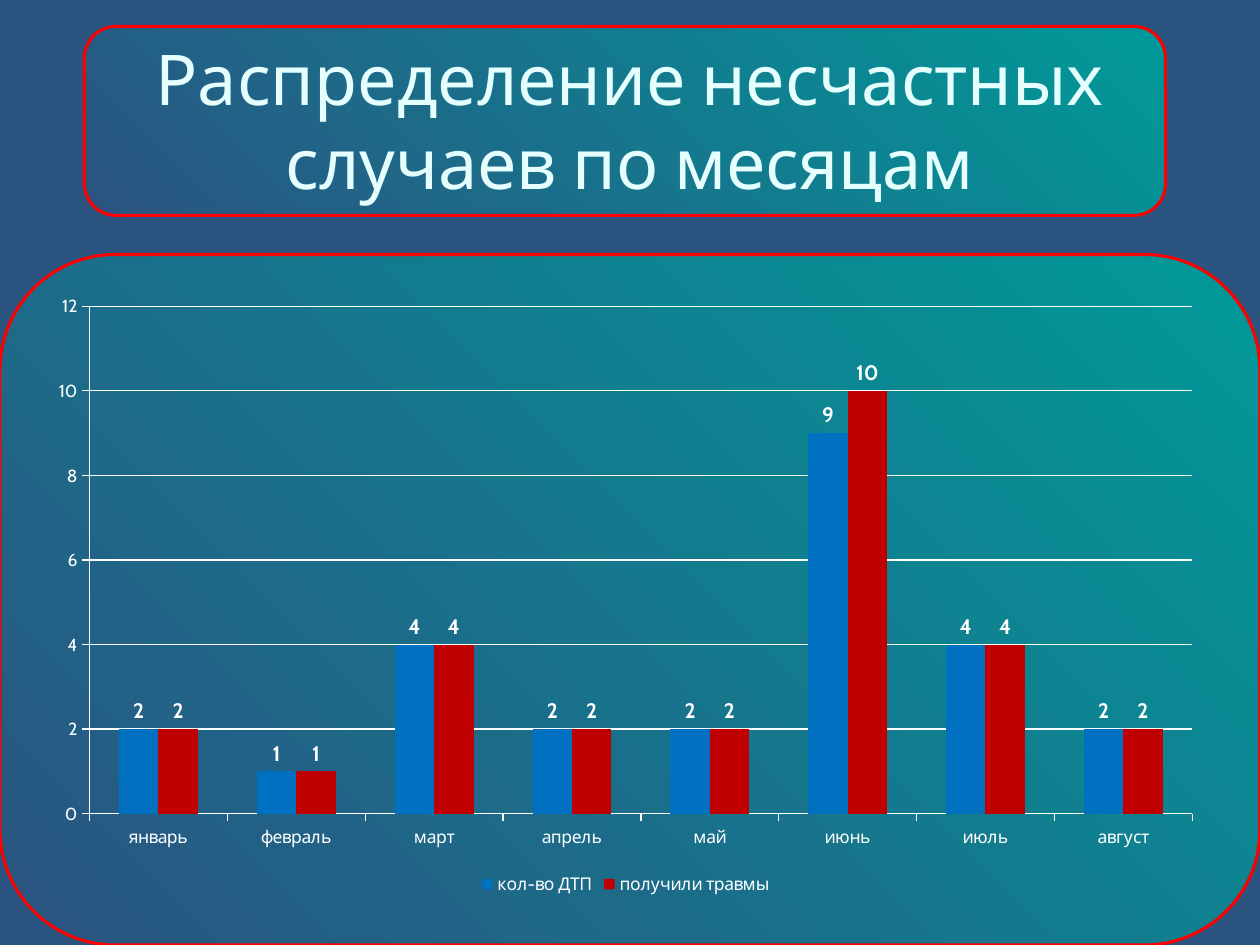
from lxml import etree
from pptx import Presentation
from pptx.chart.data import CategoryChartData
from pptx.dml.color import RGBColor
from pptx.enum import chart as ch, shapes, text
from pptx.util import Inches, Pt


def rgb(value):
    return RGBColor.from_string(value)


prs = Presentation()
prs.slide_width, prs.slide_height = Inches(10), Inches(7.5)
s = prs.slides.add_slide(prs.slide_layouts[6])
s.background.fill.solid()
s.background.fill.fore_color.rgb = rgb("2B5481")

panels = [(0, 2.02, 10, 5.48), (0.67, 0.21, 8.58, 1.5)]
for box in panels:
    sp = s.shapes.add_shape(shapes.MSO_SHAPE.ROUNDED_RECTANGLE, *map(Inches, box))
    sp.shadow.inherit = False
    sp.adjustments[0] = 0.167
    sp.fill.gradient()
    sp.fill.gradient_angle = 45
    for stop, color, position in zip(sp.fill.gradient_stops, ("2B5481", "009999"), (0, 1)):
        stop.color.rgb = rgb(color)
        stop.position = position
    sp.line.color.rgb = rgb("FF0000")
    sp.line.width = Pt(1.75)

title = s.shapes.add_textbox(Inches(0.5), Inches(0.42), Inches(9), Inches(1.05))
tf = title.text_frame
tf.word_wrap = True
tf.vertical_anchor = text.MSO_ANCHOR.MIDDLE
p = tf.paragraphs[0]
p.alignment = text.PP_ALIGN.CENTER
r = p.add_run()
r.text = "Распределение несчастных случаев по месяцам"
r.font.name = "Cabin"
r.font.size = Pt(40)
r.font.color.rgb = rgb("E5FFFF")

data = CategoryChartData(number_format="General")
data.categories = ["январь", "февраль", "март", "апрель", "май", "июнь", "июль", "август"]
data.add_series("кол-во ДТП", (2, 1, 4, 2, 2, 9, 4, 2))
data.add_series("получили травмы", (2, 1, 4, 2, 2, 10, 4, 2))
chart = s.shapes.add_chart(
    ch.XL_CHART_TYPE.COLUMN_CLUSTERED,
    Inches(0.28), Inches(2.25), Inches(9.37), Inches(4.89), data,
).chart
chart.has_title = False
chart.font.name = "Cabin"
chart.font.size = Pt(10)
chart.font.color.rgb = rgb("FFFFFF")
chart.has_legend = True
chart.legend.position = ch.XL_LEGEND_POSITION.BOTTOM
chart.legend.include_in_layout = False

value_axis = chart.value_axis
value_axis.minimum_scale, value_axis.maximum_scale, value_axis.major_unit = 0, 12, 2
value_axis.has_major_gridlines = True
for axis in (chart.category_axis, value_axis):
    axis.major_tick_mark = ch.XL_TICK_MARK.OUTSIDE
    axis.minor_tick_mark = ch.XL_TICK_MARK.NONE
for part in (chart.category_axis, value_axis, value_axis.major_gridlines):
    part.format.line.color.rgb = rgb("FFFFFF")
    part.format.line.width = Pt(0.75)

plot = chart.plots[0]
plot.gap_width = 150
plot.overlap = 0
plot.vary_by_categories = False
for series, color in zip(plot.series, ("0070C0", "C00000")):
    series.format.fill.solid()
    series.format.fill.fore_color.rgb = rgb(color)
    labels = series.data_labels
    labels.show_value = True
    labels.position = ch.XL_LABEL_POSITION.OUTSIDE_END
    labels.font.name = "Cabin"
    labels.font.size = Pt(12)
    labels.font.bold = True
    labels.font.color.rgb = rgb("FFFFFF")

prs.save("out.pptx")
